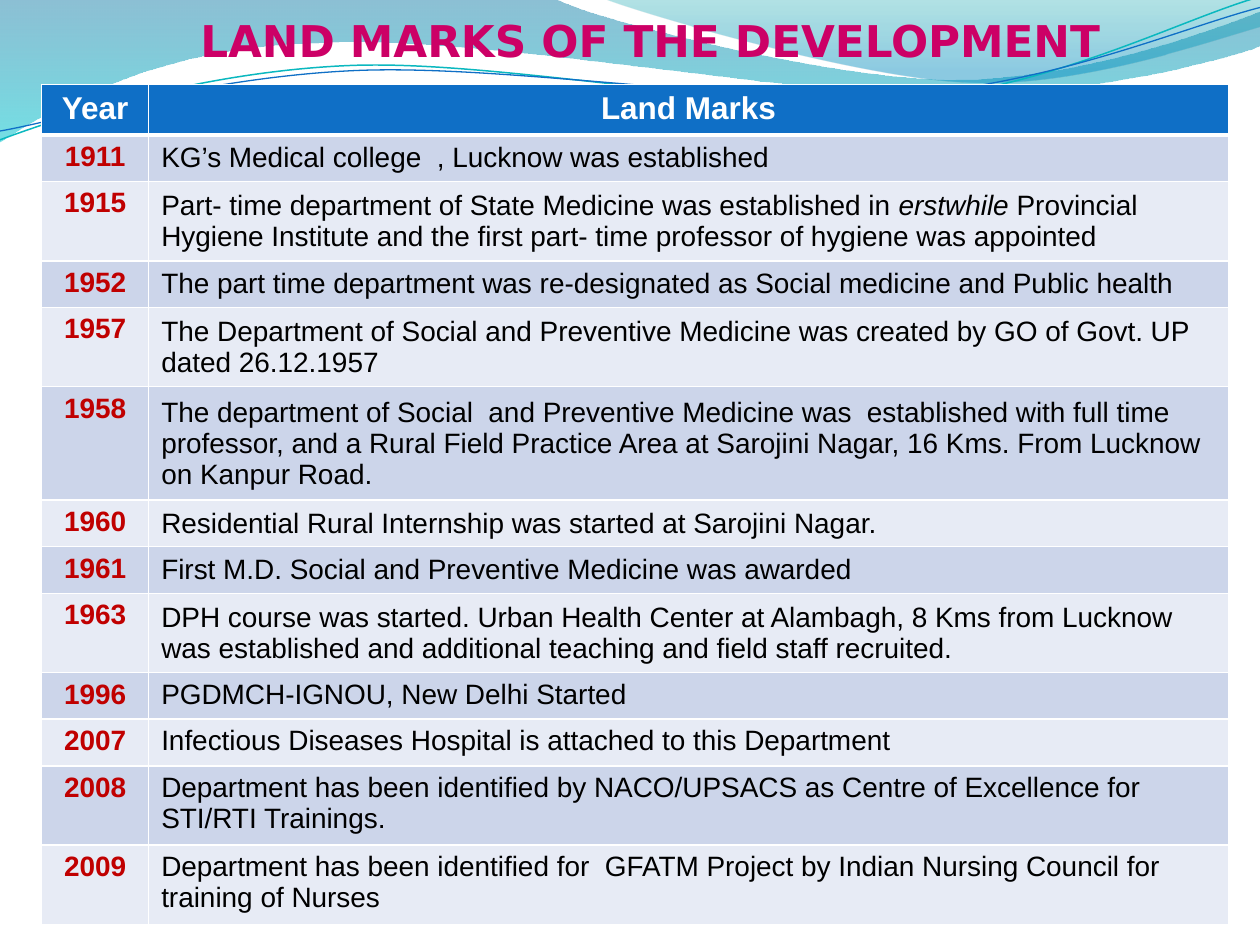
import math

from lxml import etree
from pptx import Presentation
from pptx import util as u
from pptx.dml.color import RGBColor
from pptx.enum import text
from pptx.oxml.ns import qn

MAGENTA = RGBColor(0xCC, 0x00, 0x66)
BLUE = RGBColor(0x0F, 0x6F, 0xC6)
TEAL = RGBColor(0x0A, 0xB8, 0xBF)
RED = RGBColor(0xC0, 0x00, 0x00)
BLACK = RGBColor(0, 0, 0)
WHITE = RGBColor(0xFF, 0xFF, 0xFF)
BANDS = RGBColor(0xCC, 0xD5, 0xEA), RGBColor(0xE7, 0xEB, 0xF5)

TITLE = "LAND MARKS OF THE DEVELOPMENT"
HEADINGS = "Year", "Land Marks"
TOP, MIDDLE = text.MSO_ANCHOR.TOP, text.MSO_ANCHOR.MIDDLE
# year, runs of the entry, lines it takes, anchor, space before in percent
LANDMARKS = [
    ("1911", ["KG’s Medical college  , Lucknow was established"], 1, MIDDLE, 0),
    ("1915", ["Part- time department of State Medicine was established in ", "erstwhile",
              " Provincial Hygiene Institute and the first part- time professor of hygiene "
              "was appointed"], 2, MIDDLE, 0),
    ("1952", ["The part time department was re-designated as Social medicine and Public health"],
     1, MIDDLE, 20),
    ("1957", ["The Department of Social and Preventive Medicine was created by GO of Govt. UP "
              "dated 26.12.1957"], 2, MIDDLE, 20),
    ("1958", ["The department of Social  and Preventive Medicine was  established with full time "
              "professor, and a Rural Field Practice Area at Sarojini Nagar, 16 Kms. From Lucknow "
              "on Kanpur Road."], 3, MIDDLE, 20),
    ("1960", ["Residential Rural Internship was started at Sarojini Nagar."], 1, MIDDLE, 20),
    ("1961", ["First M.D. Social and Preventive Medicine was awarded"], 1, MIDDLE, 20),
    ("1963", ["DPH course was started. Urban Health Center at Alambagh, 8 Kms from Lucknow was "
              "established and additional teaching and field staff recruited."], 2, MIDDLE, 0),
    ("1996", ["PGDMCH-IGNOU, New Delhi Started"], 1, TOP, 0),
    ("2007", ["Infectious Diseases Hospital is attached to this Department"], 1, TOP, 0),
    ("2008", ["Department has been identified by NACO/UPSACS as Centre of Excellence for "
              "STI/RTI Trainings."], 2, TOP, 0),
    ("2009", ["Department has been identified for  GFATM Project by Indian Nursing Council for "
              "training of Nurses"], 2, TOP, 0),
]
COLUMNS = 0.85, 8.57
HEADER_HEIGHT = 0.4
ROW_HEIGHTS = {1: 0.37, 2: 0.63, 3: 0.9}

# Each step is a list of one point (straight line) or three points (Bezier curve).
# Gradient stops: position, colour, opacity in percent.
BANDS_OF_WAVE = [
    ([[(0, 0)], [(4.4, -0.01)],
      [(4.76, 0.17), (6.64, 0.63), (7.58, 0.63)], [(8.53, 0.63), (9.58, 0.26), (10, 0.09)],
      [(10.01, 0.36)],
      [(9.83, 0.44), (8.7, 0.76), (7.46, 0.75)], [(6.22, 0.75), (3.82, 0.28), (2.57, 0.34)],
      [(1.29, 0.36), (0.46, 0.83), (-0.01, 1.13)]],
     [(0, RGBColor(0x00, 0x74, 0xA1), 45), (1, RGBColor(0x00, 0xC6, 0xCF), 55)]),
    ([[(4.79, -0.01)],
      [(5.09, 0.11), (6.82, 0.62), (7.69, 0.65)], [(8.56, 0.69), (9.61, 0.32), (10, 0.21)],
      [(10, 0)]],
     [(0, RGBColor(0x00, 0xA1, 0xA9), 30), (0.8, RGBColor(0x00, 0x8B, 0xBF), 45)]),
]
# Steps, centre of rotation, colour, width in points.
LINES_OF_WAVE = [
    ([[(0, 1.11)], [(0.48, 0.93), (1.58, 0.57), (2.77, 0.52)],
      [(3.95, 0.47), (5.93, 0.89), (7.13, 0.8)], [(8.33, 0.71), (9.38, 0.15), (9.98, -0.02)]],
     (4.99, 0.57), TEAL, 0.85),
    ([[(0, 1.04)], [(0.47, 0.96), (1.64, 0.61), (2.83, 0.56)],
      [(4.03, 0.51), (5.97, 0.84), (7.17, 0.75)], [(8.36, 0.67), (9.41, 0.21), (10, 0.06)]],
     (5, 0.59), BLUE, 0.75),
]
WAVE_TILT = -2.7


def turn(steps, centre, degrees):
    cos, sin = math.cos(math.radians(degrees)), math.sin(math.radians(degrees))
    cx, cy = centre
    return [[(cx + (x - cx) * cos - (y - cy) * sin, cy + (x - cx) * sin + (y - cy) * cos)
             for x, y in step] for step in steps]


def add_outline(slide, steps, close):
    """Draw straight segments through all points, then merge each three into a curve."""
    start, *points = [(u.Inches(x), u.Inches(y)) for step in steps for x, y in step]
    builder = slide.shapes.build_freeform(*start)
    builder.add_line_segments(points, close=close)
    outline = builder.convert_to_shape()
    outline.shadow.inherit = False
    segments = iter(list(outline.element.iter(qn("a:lnTo"))))
    for step in steps[1:]:
        first, *others = [next(segments) for _ in step]
        if others:
            first.tag = qn("a:cubicBezTo")
        for segment in others:
            first.append(segment[0])
            segment.getparent().remove(segment)
    return outline


def add_wave(slide):
    for steps, stops in BANDS_OF_WAVE:
        band = add_outline(slide, steps + steps[:1], True)
        band.fill.gradient()
        band.fill.gradient_angle = 270
        for stop, (position, color, _) in zip(band.fill.gradient_stops, stops):
            stop.position, stop.color.rgb = position, color
        colors = list(band.element.spPr.iter(qn("a:srgbClr")))
        for color, (_, _, opacity) in zip(colors, stops):
            etree.SubElement(color, qn("a:alpha"), val=str(opacity * 1000))
        band.line.fill.background()
    for steps, centre, color, width in LINES_OF_WAVE:
        line = add_outline(slide, turn(steps, centre, -WAVE_TILT), False)
        line.rotation = WAVE_TILT
        line.fill.background()
        line.line.color.rgb, line.line.width = color, u.Pt(width)


def write(frame, runs, size, color, font="Arial", bold=False, align=None, before=0):
    """Fill the first paragraph; every second run is italic, before is in percent."""
    paragraph = frame.paragraphs[0]
    paragraph.alignment = align
    if before:
        spacing = etree.SubElement(paragraph._p.get_or_add_pPr(), qn("a:spcBef"))
        etree.SubElement(spacing, qn("a:spcPct"), val=str(before * 1000))
    for i, words in enumerate(runs):
        run = paragraph.add_run()
        run.text = words
        run.font.size, run.font.name, run.font.bold = u.Pt(size), font, bold
        run.font.italic = i % 2 == 1
        run.font.color.rgb = color
    return paragraph


def style_cell(cell, fill, bottom=1):
    properties = cell._tc.get_or_add_tcPr()
    for side in "LRTB":
        width = bottom if side == "B" else 1
        border = etree.SubElement(properties, qn(f"a:ln{side}"), w=str(u.Pt(width)))
        solid = etree.SubElement(border, qn("a:solidFill"))
        etree.SubElement(solid, qn("a:srgbClr"), val=str(WHITE))
    cell.fill.solid()
    cell.fill.fore_color.rgb = fill


def add_title(slide):
    title = slide.shapes.title
    title.left, title.top, title.width, title.height = map(u.Inches, (0.23, 0, 10, 0.59))
    title.text_frame.vertical_anchor = TOP
    title.text_frame.word_wrap = True
    paragraph = write(title.text_frame, [TITLE], 25, MAGENTA, font="DejaVu Sans", bold=True,
                      align=text.PP_ALIGN.CENTER)
    tail = paragraph.add_run()
    tail.text = " "
    tail.font.size, tail.font.name, tail.font.bold = u.Pt(29), "DejaVu Sans", True
    tail.font.color.rgb = MAGENTA
    title.element.getparent().append(title.element)


def add_landmarks(slide):
    heights = [HEADER_HEIGHT] + [ROW_HEIGHTS[entry[2]] for entry in LANDMARKS]
    table = slide.shapes.add_table(len(heights), len(COLUMNS), u.Inches(0.33), u.Inches(0.67),
                                   u.Inches(sum(COLUMNS)), u.Inches(sum(heights))).table
    for column, width in zip(table.columns, COLUMNS):
        column.width = u.Inches(width)
    for row, height in zip(table.rows, heights):
        row.height = u.Inches(height)
    centre = text.PP_ALIGN.CENTER
    for c, heading in enumerate(HEADINGS):
        style_cell(table.cell(0, c), BLUE, bottom=3)
        write(table.cell(0, c).text_frame, [heading], 18, WHITE, bold=True, align=centre)
    for r, (year, runs, _, anchor, before) in enumerate(LANDMARKS, 1):
        year_cell, entry_cell = table.cell(r, 0), table.cell(r, 1)
        for cell in (year_cell, entry_cell):
            style_cell(cell, BANDS[(r - 1) % 2], bottom=1)
        write(year_cell.text_frame, [year], 16, RED, bold=True, align=centre, before=20)
        write(entry_cell.text_frame, runs, 16, BLACK, before=before)
        entry_cell.vertical_anchor = anchor


def main():
    deck = Presentation()
    deck.slide_width, deck.slide_height = u.Inches(10), u.Inches(7.5)
    slide = deck.slides.add_slide(deck.slide_layouts[5])
    add_wave(slide)
    add_title(slide)
    add_landmarks(slide)
    deck.save("out.pptx")


if __name__ == "__main__":
    main()
